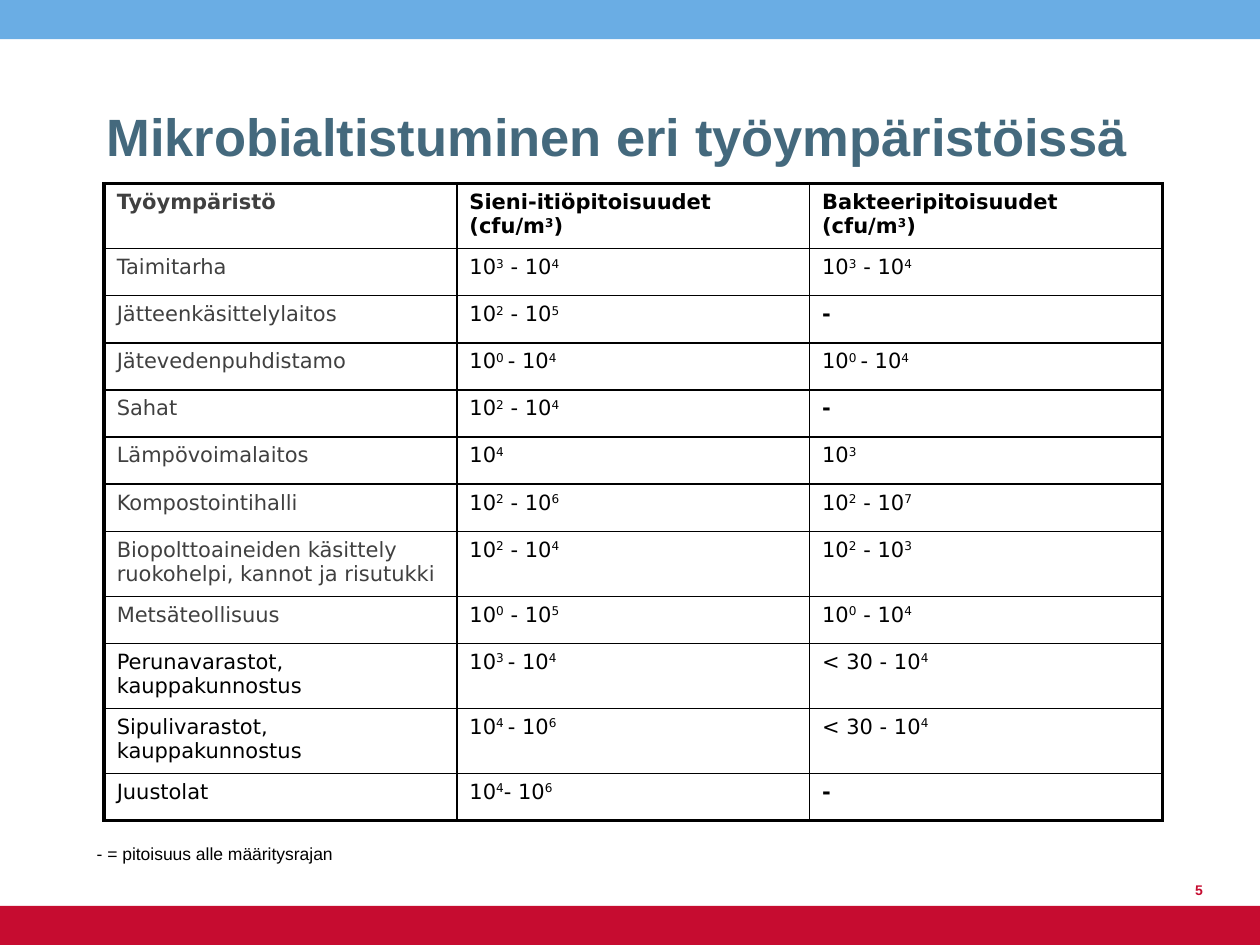
from lxml import etree
from pptx import Presentation, util as u
from pptx.dml.color import RGBColor
from pptx.enum import shapes, text
from pptx.oxml.ns import qn

SKY = RGBColor(0x6A, 0xAD, 0xE4)
RED = RGBColor(0xC6, 0x0C, 0x30)
SLATE = RGBColor(0x44, 0x69, 0x7D)
GREY = RGBColor(0x40, 0x40, 0x40)
BLACK = RGBColor(0, 0, 0)

WIDTH, HEIGHT, BAND = 25.4, 19.05, 0.79
TALL_ROW, LOW_ROW, COLUMN = 1.31, 0.95, 7.11
THICK, THIN = 2.25, 1

HEADER = ("Työympäristö", "Sieni-itiöpitoisuudet (cfu/m^3^)", "Bakteeripitoisuudet (cfu/m^3^)")
MEASURED = [
    ("Taimitarha", "10^3^ - 10^4", "10^3^ - 10^4"),
    ("Jätteenkäsittelylaitos", "10^2^ - 10^5", "-"),
    ("Jätevedenpuhdistamo", "10^0 ^- 10^4", "10^0 ^- 10^4"),
    ("Sahat", "10^2^ - 10^4", "-"),
    ("Lämpövoimalaitos", "10^4", "10^3"),
    ("Kompostointihalli", "10^2^ - 10^6", "10^2^ - 10^7"),
    ("Biopolttoaineiden käsittely ruokohelpi, kannot ja risutukki", "10^2^ - 10^4", "10^2^ - 10^3"),
    ("Metsäteollisuus", "10^0^ - 10^5", "10^0^ - 10^4"),
]
STORAGE = [
    ("Perunavarastot, kauppakunnostus", "10^3 ^- 10^4", "< 30 - 10^4"),
    ("Sipulivarastot, kauppakunnostus", "10^4 ^- 10^6", "< 30 - 10^4"),
    ("Juustolat", "10^4^- 10^6", "-"),
]


class SlideBuilder:
    """Draws styled elements on one slide; text between carets is superscript."""

    def __init__(self, slide, body_font="Arial", table_font="DejaVu Sans", table_size=12):
        self.slide = slide
        self.body_font = body_font
        self.table_font = table_font
        self.table_size = table_size

    def band(self, top, color):
        band = self.slide.shapes.add_shape(
            shapes.MSO_SHAPE.RECTANGLE, u.Cm(0), u.Cm(top), u.Cm(WIDTH), u.Cm(BAND))
        band.shadow.inherit = False
        band.fill.solid()
        band.fill.fore_color.rgb = color
        band.line.fill.background()

    def runs(self, paragraph, wording, font, size, color, bold):
        for index, part in enumerate(wording.split("^")):
            if not part:
                continue
            run = paragraph.add_run()
            run.text = part
            run.font.name = font
            run.font.size = u.Pt(size)
            run.font.bold = bold
            run.font.color.rgb = color
            if index % 2:
                run.font._element.set("baseline", "30000")

    def label(self, box, wording, size, color, bold=False,
              anchor=text.MSO_ANCHOR.BOTTOM, align=text.PP_ALIGN.LEFT):
        frame = self.slide.shapes.add_textbox(*map(u.Cm, box)).text_frame
        frame.word_wrap = True
        frame.vertical_anchor = anchor
        frame.paragraphs[0].alignment = align
        self.runs(frame.paragraphs[0], wording, self.body_font, size, color, bold)

    def borders(self, cell, widths):
        properties = cell._tc.get_or_add_tcPr()
        for side, width in widths.items():
            line = etree.SubElement(properties, qn(f"a:ln{side}"), w=str(u.Pt(width)))
            fill = etree.SubElement(line, qn("a:solidFill"))
            etree.SubElement(fill, qn("a:srgbClr"), val=str(BLACK))

    def table(self, left, top, rows, heights, grey_rows):
        columns = len(rows[0])
        table = self.slide.shapes.add_table(
            len(rows), columns, u.Cm(left), u.Cm(top),
            u.Cm(COLUMN * columns), u.Cm(sum(heights))).table
        table.first_row = table.horz_banding = False
        for column in table.columns:
            column.width = u.Cm(COLUMN)
        for r, (row, height) in enumerate(zip(rows, heights)):
            table.rows[r].height = u.Cm(height)
            for c, wording in enumerate(row):
                cell = table.cell(r, c)
                self.borders(cell, {
                    "L": THICK if c == 0 else THIN,
                    "R": THICK if c == columns - 1 else THIN,
                    "T": THICK if r == 0 else THIN,
                    "B": THICK if r == len(rows) - 1 else THIN,
                })
                cell.fill.background()
                color = GREY if c == 0 and r < grey_rows else BLACK
                self.runs(cell.text_frame.paragraphs[0], wording, self.table_font,
                          self.table_size, color, r == 0 or wording == "-")


def main():
    deck = Presentation()
    deck.slide_width, deck.slide_height = u.Cm(WIDTH), u.Cm(HEIGHT)
    builder = SlideBuilder(deck.slides.add_slide(deck.slide_layouts[6]))

    builder.band(0, SKY)
    builder.band(HEIGHT - BAND, RED)
    builder.label((1.9, 0.5, 22.4, 3), "Mikrobialtistuminen eri työympäristöissä", 30, SLATE, True)

    rows = [HEADER, *MEASURED, *STORAGE]
    heights = [TALL_ROW if row is HEADER or len(row[0]) > 25 else LOW_ROW for row in rows]
    builder.table(2.1, 3.7, rows, heights, 1 + len(MEASURED))

    builder.label((1.7, 16.86, 13.6, 0.68), "- = pitoisuus alle määritysrajan", 10, BLACK,
                  anchor=text.MSO_ANCHOR.TOP)
    builder.label((23.1, 17.22, 1.4, 1.02), "5", 8, RED, True, align=text.PP_ALIGN.RIGHT)
    deck.save("out.pptx")


if __name__ == "__main__":
    main()
